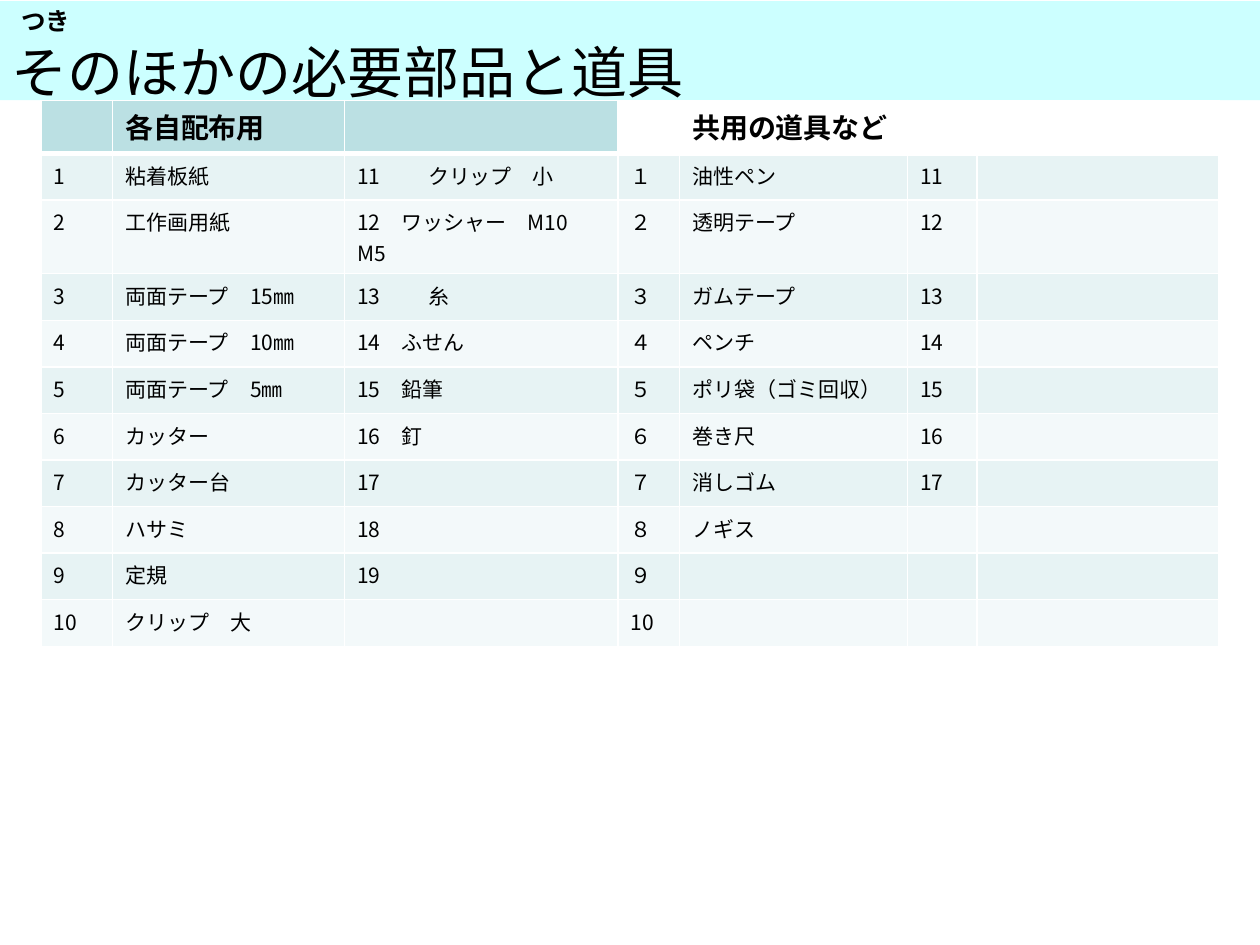
import pptx
import pptx.dml.color
import pptx.enum.shapes
import pptx.enum.text
import pptx.oxml.ns
import pptx.util
from lxml import etree

COLORS = {
    "band": "CCFFFF", "header": "BBE0E3", "odd": "E7F3F4", "even": "F3F9FA",
    "white": "FFFFFF", "text": "000000",
}
BODY_FONT = "Noto Sans CJK JP"
HEADER_FONT = "Arial"
COLUMN_WIDTHS = [41, 132.5, 156.2, 35.3, 130.3, 39.6, 138.2]
ROW_HEIGHTS = [30.4, 26.64, 42] + [26.64] * 8
HEADER = ["", "各自配布用", "", "", "共用の道具など", "", ""]
SUPPLIES = [
    "粘着板紙", "工作画用紙", "両面テープ　15㎜", "両面テープ　10㎜", "両面テープ　5㎜",
    "カッター", "カッター台", "ハサミ", "定規", "クリップ　大",
]
MORE_SUPPLIES = [
    "11\tクリップ　小", "12　ワッシャー　M10　M5", "13\t糸", "14　ふせん", "15　鉛筆",
    "16　釘", "17", "18", "19", "",
]
SHARED_NUMBERS = [*"１２３４５６７８９", "10"]
SHARED_TOOLS = [
    "油性ペン", "透明テープ", "ガムテープ", "ペンチ", "ポリ袋（ゴミ回収）",
    "巻き尺", "消しゴム", "ノギス", "", "",
]


class SlideBuilder:
    """Holds the style and the current slide."""

    def __init__(self, presentation):
        self.slide = presentation.slides.add_slide(presentation.slide_layouts[6])

    def color(self, name):
        return pptx.dml.color.RGBColor.from_string(COLORS[name])

    def child(self, parent, tag, **attributes):
        return etree.SubElement(parent, pptx.oxml.ns.qn(tag), **attributes)

    def box(self, left, top, width, height):
        return [pptx.util.Pt(value) for value in (left, top, width, height)]

    def format_text(self, paragraph, font_name, size, bold=False):
        for run in paragraph.runs:
            run.font.name = font_name
            run.font.size = pptx.util.Pt(size)
            run.font.bold = bold
            run.font.color.rgb = self.color("text")
            self.child(run.font._element, "a:ea", typeface=font_name)
        if not paragraph.runs:
            self.child(paragraph._p, "a:endParaRPr", sz=str(size * 100))

    def rectangle(self, left, top, width, height, fill):
        shape = self.slide.shapes.add_shape(
            pptx.enum.shapes.MSO_SHAPE.RECTANGLE, *self.box(left, top, width, height))
        shape.shadow.inherit = False
        shape.fill.solid()
        shape.fill.fore_color.rgb = self.color(fill)
        shape.line.fill.background()

    def text(self, left, top, width, height, text, size, bold=False):
        shape = self.slide.shapes.add_textbox(*self.box(left, top, width, height))
        text_frame = shape.text_frame
        text_frame.word_wrap = True
        text_frame.vertical_anchor = pptx.enum.text.MSO_ANCHOR.MIDDLE
        text_frame.text = text
        self.format_text(text_frame.paragraphs[0], BODY_FONT, size, bold)

    def borders(self, cell, bottom_width):
        properties = cell._tc.get_or_add_tcPr()
        for side, width in (("L", 1), ("R", 1), ("T", 1), ("B", bottom_width)):
            line = self.child(properties, f"a:ln{side}", w=str(pptx.util.Pt(width)))
            fill = self.child(line, "a:solidFill")
            self.child(fill, "a:srgbClr", val=COLORS["white"])

    def cell(self, cell, text, fill, is_header):
        self.borders(cell, 3 if is_header else 1)
        cell.fill.solid()
        cell.fill.fore_color.rgb = self.color(fill)
        cell.text_frame.text = text
        paragraph = cell.text_frame.paragraphs[0]
        if "\t" in text:
            tabs = self.child(paragraph._p.get_or_add_pPr(), "a:tabLst")
            self.child(tabs, "a:tab", pos=str(pptx.util.Pt(40.5)), algn="l")
        if is_header:
            cell.margin_top = pptx.util.Pt(7.6)
            cell.margin_bottom = pptx.util.Pt(0)
            self.format_text(paragraph, HEADER_FONT, 16, True)
        else:
            self.format_text(paragraph, BODY_FONT, 12)

    def table(self, left, top, rows):
        frame = self.slide.shapes.add_table(
            len(rows), len(COLUMN_WIDTHS),
            *self.box(left, top, sum(COLUMN_WIDTHS), sum(ROW_HEIGHTS)))
        table = frame.table
        for column, width in zip(table.columns, COLUMN_WIDTHS):
            column.width = pptx.util.Pt(width)
        for row_index, values in enumerate(rows):
            table.rows[row_index].height = pptx.util.Pt(ROW_HEIGHTS[row_index])
            for column_index, value in enumerate(values):
                if row_index == 0:
                    fill = "header" if column_index < 3 else "white"
                else:
                    fill = "odd" if row_index % 2 else "even"
                self.cell(table.cell(row_index, column_index), value, fill, row_index == 0)
        table.cell(0, 5).merge(table.cell(0, 6))


def main():
    presentation = pptx.Presentation()
    presentation.slide_width = pptx.util.Pt(720)
    presentation.slide_height = pptx.util.Pt(540)
    rows = [HEADER]
    for index in range(10):
        shared_extra = str(index + 11) if index < 7 else ""
        rows.append([str(index + 1), SUPPLIES[index], MORE_SUPPLIES[index],
                     SHARED_NUMBERS[index], SHARED_TOOLS[index], shared_extra, ""])
    builder = SlideBuilder(presentation)
    builder.rectangle(0, 0.7, 720, 56.5, "band")
    builder.text(-0.7, 12, 612, 56.9, "そのほかの必要部品と道具", 32)
    builder.text(5, -2.2, 478.8, 28.1, "つき", 14, True)
    builder.table(23.4, 57.4, rows)
    presentation.save("out.pptx")


if __name__ == "__main__":
    main()
